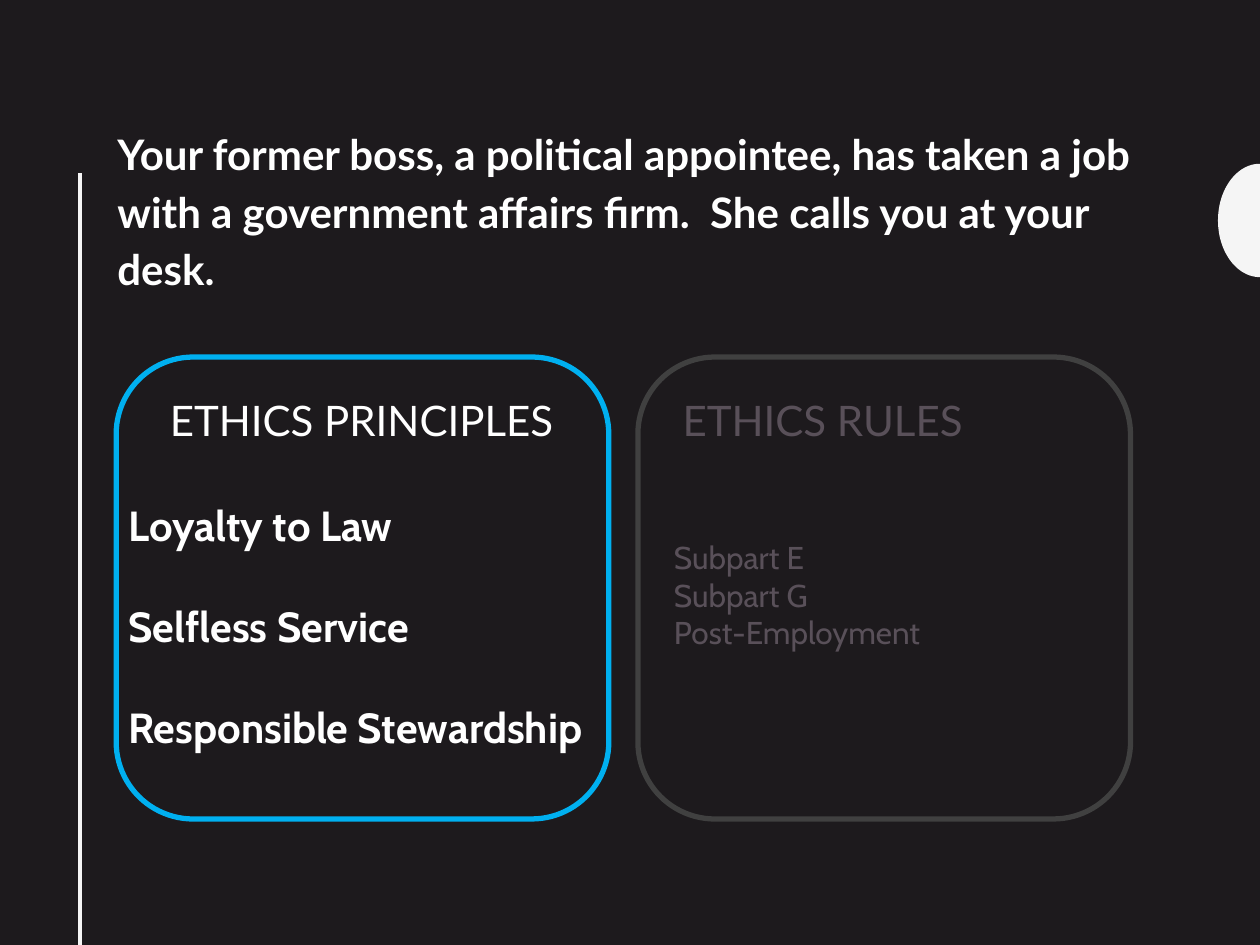
import math

from lxml import etree
from pptx import Presentation
from pptx.dml.color import RGBColor
from pptx.enum.shapes import MSO_CONNECTOR, MSO_SHAPE
from pptx.oxml.ns import qn
from pptx.util import Pt

STRAIGHT = MSO_CONNECTOR.STRAIGHT
ROUNDED = MSO_SHAPE.ROUNDED_RECTANGLE

COLOURS = {
    "background": "1D1A1D",
    "white": "FFFFFF",
    "accent": "F5F5F5",
    "blue": "00B0F0",
    "dim_line": "404040",
    "dim_text": "595059",
}
HEADING_FONT, BODY_FONT = "Lato", "Cabin"
WIDTH, HEIGHT = 720, 540


def colour(name):
    return RGBColor.from_string(COLOURS[name])


class SlideBuilder:
    """Holds the current slide and draws styled elements on it, in points."""

    def __init__(self, slide):
        self.slide = slide
        fill = slide.background.fill
        fill.solid()
        fill.fore_color.rgb = colour("background")

    def half_ellipse(self, right, middle, radius_x, radius_y, fill, steps=48):
        """Draw the left half of an ellipse, with its flat side at right."""
        points = []
        for step in range(steps + 1):
            angle = math.pi * step / steps
            points.append((Pt(right - radius_x * math.sin(angle)),
                           Pt(middle - radius_y * math.cos(angle))))
        builder = self.slide.shapes.build_freeform(*points[0], scale=1.0)
        builder.add_line_segments(points[1:], close=True)
        shape = builder.convert_to_shape()
        shape.shadow.inherit = False
        shape.fill.solid()
        shape.fill.fore_color.rgb = colour(fill)
        shape.line.fill.background()

    def line(self, x1, y1, x2, y2, line, weight):
        connector = self.slide.shapes.add_connector(
            STRAIGHT, Pt(x1), Pt(y1), Pt(x2), Pt(y2))
        connector.line.color.rgb = colour(line)
        connector.line.width = Pt(weight)
        etree.SubElement(connector._element.spPr, qn("a:effectLst"))

    def frame(self, left, top, width, height, line):
        shape = self.slide.shapes.add_shape(
            ROUNDED, Pt(left), Pt(top), Pt(width), Pt(height))
        shape.shadow.inherit = False
        shape.fill.background()
        shape.line.color.rgb = colour(line)
        shape.line.width = Pt(3)

    def text(self, left, top, width, height, lines, font=HEADING_FONT, size=24,
             fill="white", bold=False, gap=0, spacing=1.0, wrap=True):
        """Write one paragraph per line, with gap points between them."""
        box = self.slide.shapes.add_textbox(
            Pt(left), Pt(top), Pt(width), Pt(height))
        frame = box.text_frame
        frame.word_wrap = wrap
        frame.text = "\n".join(lines)
        for index, paragraph in enumerate(frame.paragraphs):
            paragraph.font.name = font
            paragraph.font.size = Pt(size)
            paragraph.font.bold = bold
            paragraph.font.color.rgb = colour(fill)
            paragraph.line_spacing = spacing
            paragraph.space_before = Pt(gap if index else 0)


def main():
    presentation = Presentation()
    presentation.slide_width, presentation.slide_height = Pt(WIDTH), Pt(HEIGHT)
    builder = SlideBuilder(
        presentation.slides.add_slide(presentation.slide_layouts[6]))

    builder.half_ellipse(WIDTH, 126, 24, 32.4, "accent")
    builder.line(45.6, 99, 45.6, HEIGHT, "accent", 2)

    panels = [
        ("ETHICS PRINCIPLES", 90, 66.4, "white", "blue"),
        ("ETHICS RULES", 383, 364.5, "dim_text", "dim_line"),
    ]
    for heading, text_left, frame_left, text_colour, line_colour in panels:
        builder.text(text_left, 222, 260, 36, [heading], fill=text_colour)
        builder.frame(frame_left, 204, 281.5, 264, line_colour)

    builder.text(66.4, 282, 276.5, 152.6,
                 ["Loyalty to Law", "Selfless Service",
                  "Responsible Stewardship"],
                 font=BODY_FONT, bold=True, gap=28.8, wrap=False)
    builder.text(378, 303.8, 348 - 6, 72.5,
                 ["Subpart E", "Subpart G", "Post-Employment"],
                 font=BODY_FONT, size=18, fill="dim_text")
    builder.text(60, 66, 612, 130,
                 ["Your former boss, a political appointee, has taken a job "
                  "with a government affairs firm.  She calls you at your "
                  "desk."],
                 bold=True, spacing=1.14)

    presentation.save("out.pptx")


if __name__ == "__main__":
    main()
